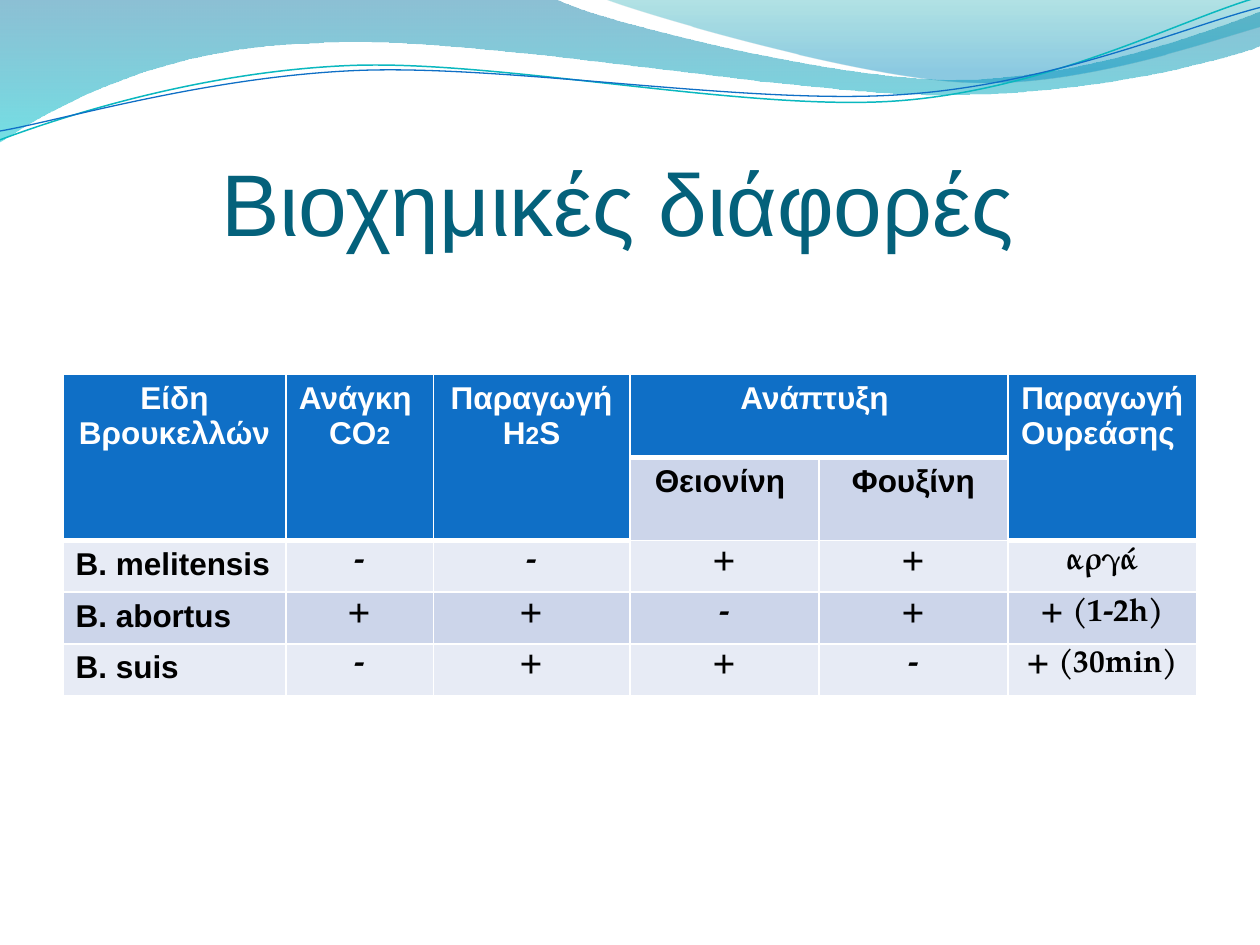
import math

from lxml import etree
from pptx import Presentation, util as u
from pptx.dml.color import RGBColor
from pptx.enum import text
from pptx.oxml import ns

WHITE = RGBColor(0xFF, 0xFF, 0xFF)
BLACK = RGBColor(0, 0, 0)
BLUE = RGBColor(0x0F, 0x6F, 0xC6)
TEAL = RGBColor(0x0A, 0xB8, 0xBF)
TITLE_COLOR = RGBColor(0x04, 0x61, 0x7B)
BANDS = [RGBColor(0xE7, 0xEB, 0xF5), RGBColor(0xCC, 0xD5, 0xEA)]
SANS, SERIF = "Arial", "TeX Gyre Pagella"

TITLE = "Βιοχημικές διάφορές "
COLUMNS = [1.77, 1.17, 1.56, 1.5, 1.5, 1.5]
ROWS = [0.66, 0.66, 0.41, 0.41, 0.41]
CELLS = [
    ["Είδη Βρουκελλών", "Ανάγκη \nCO|2", "Παραγωγή Η|2|S", "Ανάπτυξη ", "", "Παραγωγή Ουρεάσης "],
    ["", "", "", "Θειονίνη ", "Φουξίνη", ""],
    ["B. melitensis", "-", "-", "+", "+", "αργά"],
    ["B. abortus", "+", "+", "-", "+", "+ (1-2h)"],
    ["B. suis", "-", "+", "+", "-", "+ (30min)"],
]
MERGES = [((0, 0), (1, 0)), ((0, 1), (1, 1)), ((0, 2), (1, 2)), ((0, 3), (0, 4)), ((0, 5), (1, 5))]

BANNERS = [
    ([(0, 0), (4.4, -0.01), (4.76, 0.17, 6.64, 0.63, 7.58, 0.63),
      (8.53, 0.63, 9.58, 0.26, 10, 0.09), (10.01, 0.36),
      (9.83, 0.44, 8.7, 0.76, 7.46, 0.75), (6.22, 0.75, 3.82, 0.28, 2.57, 0.34),
      (1.29, 0.36, 0.46, 0.83, -0.01, 1.13), (0, 0)],
     [(0, RGBColor(0x00, 0x74, 0xA1), 45), (1, RGBColor(0x00, 0xC6, 0xCF), 55)]),
    ([(4.79, -0.01), (5.09, 0.11, 6.82, 0.62, 7.69, 0.65),
      (8.56, 0.69, 9.61, 0.32, 10, 0.21), (10, 0), (4.79, -0.01)],
     [(0, RGBColor(0x00, 0xA1, 0xA9), 30), (0.8, RGBColor(0x00, 0x8B, 0xBF), 45)]),
]
WAVES = [
    ([(0, 1.11), (0.48, 0.93, 1.58, 0.57, 2.77, 0.52),
      (3.95, 0.47, 5.93, 0.89, 7.13, 0.8), (8.33, 0.71, 9.38, 0.15, 9.98, -0.02)],
     (4.99, 0.58), TEAL, 0.85),
    ([(0, 1.04), (0.47, 0.96, 1.64, 0.61, 2.83, 0.56),
      (4.03, 0.51, 5.97, 0.84, 7.17, 0.75), (8.36, 0.67, 9.41, 0.21, 10, 0.06)],
     (5, 0.59), BLUE, 0.75),
]
WAVE_TILT = 2.7


def apply(target, values):
    for name, value in values.items():
        setattr(target, name, value)


def pairs(segment):
    return list(zip(segment[::2], segment[1::2]))


def turn(segment, center, degrees):
    cosine, sine = math.cos(math.radians(degrees)), math.sin(math.radians(degrees))
    turned = []
    for x, y in pairs(segment):
        across, down = x - center[0], y - center[1]
        turned += [center[0] + across * cosine - down * sine,
                   center[1] + across * sine + down * cosine]
    return turned


def add_outline(shapes, outline, close):
    points = [(u.Inches(x), u.Inches(y)) for segment in outline for x, y in pairs(segment)]
    builder = shapes.build_freeform(*points[0])
    builder.add_line_segments(points[1:], close=close)
    shape = builder.convert_to_shape()
    shape.shadow.inherit = False
    steps = iter(list(shape.element.iter(ns.qn("a:lnTo"))))
    for segment in outline[1:]:
        first, *others = [next(steps) for _ in pairs(segment)]
        if others:
            first.tag = ns.qn("a:cubicBezTo")
        for step in others:
            first.append(step[0])
            step.getparent().remove(step)
    return shape


def add_banner(page, outline, stops):
    shape = add_outline(page.shapes, outline, True)
    shape.line.fill.background()
    shape.fill.gradient()
    shape.fill.gradient_angle = 270
    for stop, (position, color, _) in zip(shape.fill.gradient_stops, stops):
        stop.position = position
        stop.color.rgb = color
    for color, (_, _, opacity) in zip(shape.element.iter(ns.qn("a:srgbClr")), stops):
        etree.SubElement(color, ns.qn("a:alpha"), val=str(opacity * 1000))


def add_wave(group, outline, center, color, width):
    level = [turn(segment, center, WAVE_TILT) for segment in outline]
    shape = add_outline(group.shapes, level, False)
    shape.rotation = 360 - WAVE_TILT
    shape.fill.background()
    shape.line.color.rgb = color
    shape.line.width = u.Pt(width)


def set_borders(cell, bottom):
    properties = cell._tc.get_or_add_tcPr()
    for side, width in (("L", 1), ("R", 1), ("T", 1), ("B", bottom)):
        line = etree.SubElement(properties, ns.qn(f"a:ln{side}"), w=str(u.Pt(width)))
        fill = etree.SubElement(line, ns.qn("a:solidFill"))
        etree.SubElement(fill, ns.qn("a:srgbClr"), val=str(WHITE))


def write(frame, words, align, font, color):
    for index, line in enumerate(words.split("\n")):
        para = frame.add_paragraph() if index else frame.paragraphs[0]
        para.alignment = align
        for part, piece in enumerate(line.split("|")):
            span = para.add_run()
            span.text = piece
            apply(span.font, {"name": font, "size": u.Pt(14 if part % 2 else 18), "bold": True})
            span.font.color.rgb = color


def add_grid(page):
    frame = page.shapes.add_table(len(ROWS), len(COLUMNS), u.Inches(0.5), u.Inches(2.97),
                                  u.Inches(sum(COLUMNS)), u.Inches(sum(ROWS)))
    table = frame.table
    apply(table, {"first_row": False, "horz_banding": False})
    for column, width in zip(table.columns, COLUMNS):
        column.width = u.Inches(width)
    for row, height in zip(table.rows, ROWS):
        row.height = u.Inches(height)
    for first, last in MERGES:
        table.cell(*first).merge(table.cell(*last))
    for r, row in enumerate(CELLS):
        for c, words in enumerate(row):
            cell = table.cell(r, c)
            header = r == 0 or (r == 1 and cell.is_spanned)
            set_borders(cell, 3 if header else 1)
            cell.fill.solid()
            cell.fill.fore_color.rgb = BLUE if header else BANDS[r % 2]
            if words:
                align = text.PP_ALIGN.LEFT if r > 1 and c == 0 else text.PP_ALIGN.CENTER
                write(cell.text_frame, words, align, SANS if r < 2 or c == 0 else SERIF,
                      WHITE if header else BLACK)


def add_title(page):
    title = page.shapes.title
    apply(title, {"left": u.Inches(0.5), "top": u.Inches(0.77),
                  "width": u.Inches(9), "height": u.Inches(1.25)})
    frame = title.text_frame
    apply(frame, {"margin_left": 0, "margin_right": 0, "margin_top": u.Inches(0.05),
                  "margin_bottom": 0, "word_wrap": True,
                  "vertical_anchor": text.MSO_ANCHOR.BOTTOM,
                  "auto_size": text.MSO_AUTO_SIZE.NONE})
    para = frame.paragraphs[0]
    para.alignment = text.PP_ALIGN.CENTER
    span = para.add_run()
    span.text = TITLE
    apply(span.font, {"name": SANS, "size": u.Pt(50)})
    span.font.color.rgb = TITLE_COLOR
    title.element.getparent().append(title.element)


def main():
    deck = Presentation()
    apply(deck, {"slide_width": u.Inches(10), "slide_height": u.Inches(7.5)})
    page = deck.slides.add_slide(deck.slide_layouts[5])
    for banner in BANNERS:
        add_banner(page, *banner)
    group = page.shapes.add_group_shape()
    for wave in WAVES:
        add_wave(group, *wave)
    add_title(page)
    add_grid(page)
    deck.save("out.pptx")


if __name__ == "__main__":
    main()
